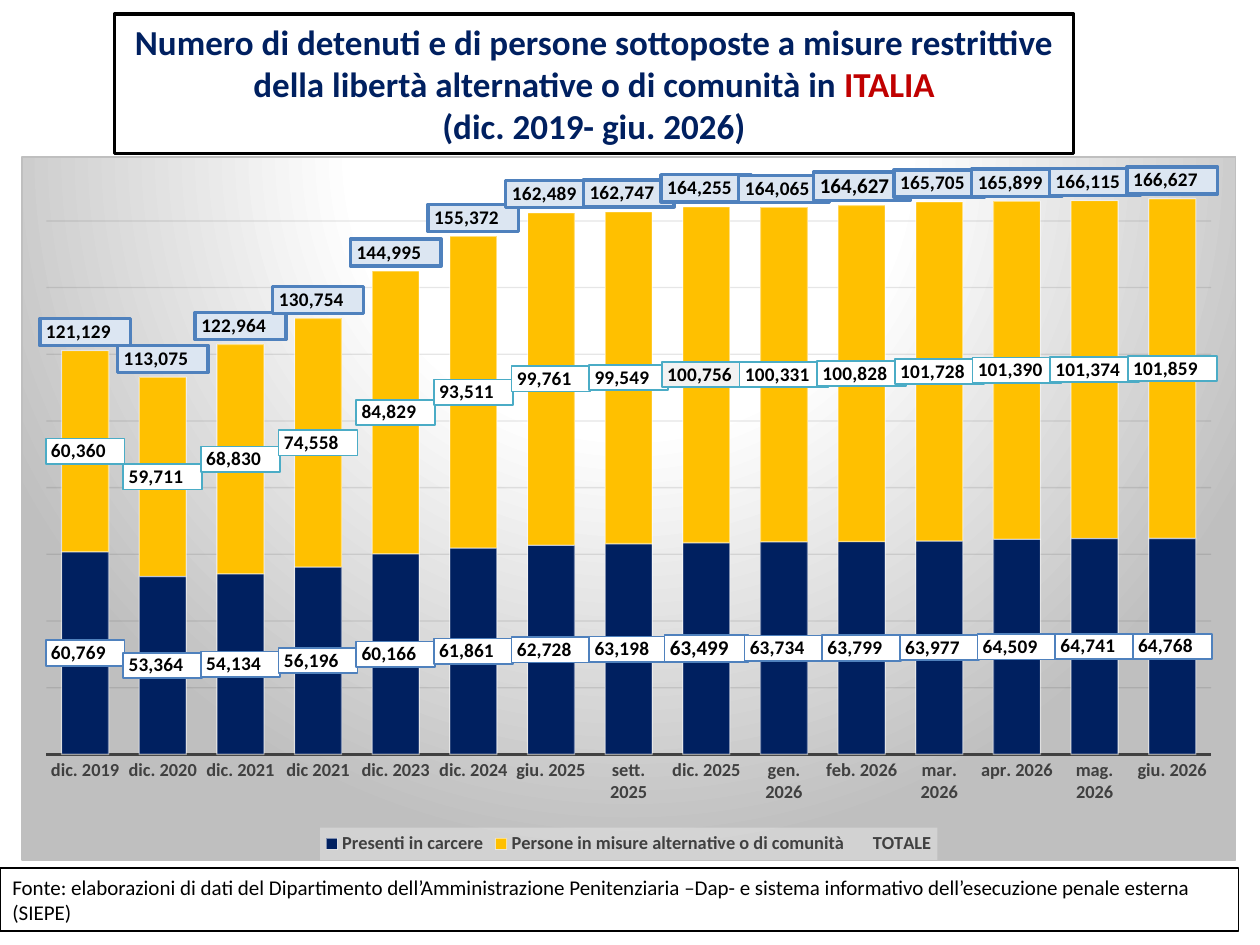
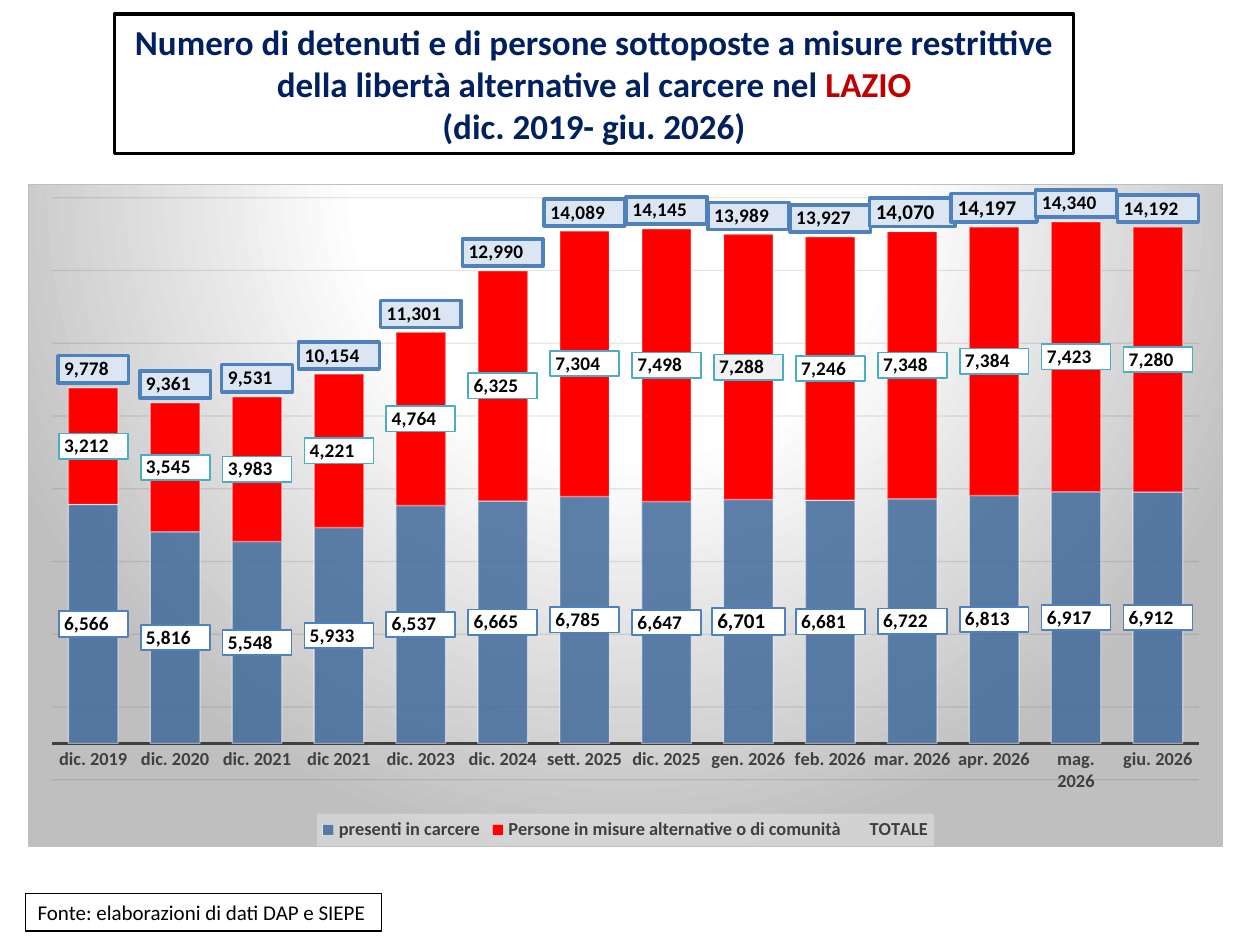
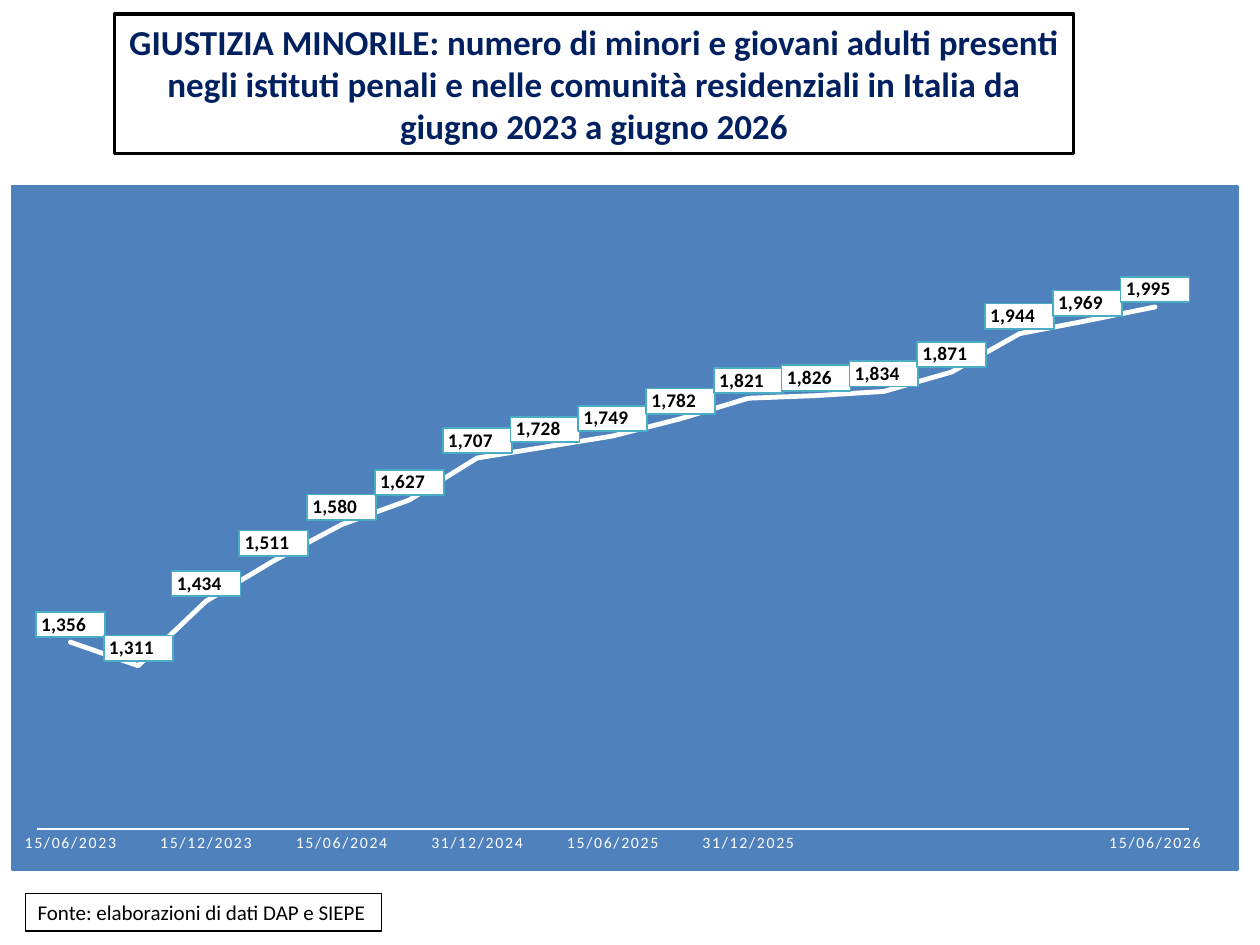
from dataclasses import dataclass
from typing import Optional

import lxml.etree
import pptx
import pptx.chart.data
import pptx.dml.color
import pptx.enum.chart
import pptx.enum.shapes
import pptx.enum.text
import pptx.oxml
import pptx.oxml.ns
import pptx.util
from pptx.dml.color import RGBColor
from pptx.enum.chart import XL_CHART_TYPE, XL_LABEL_POSITION
from pptx.util import Inches

# Shared look
FONT = "Calibri"
BLACK = RGBColor(0x00, 0x00, 0x00)
WHITE = RGBColor(0xFF, 0xFF, 0xFF)
NAVY = RGBColor(0x00, 0x20, 0x60)
DARK_RED = RGBColor(0xC0, 0x00, 0x00)
RED = RGBColor(0xFF, 0x00, 0x00)
AMBER = RGBColor(0xFF, 0xC0, 0x00)
STEEL = RGBColor(0x42, 0x6B, 0x9D)
BLUE = RGBColor(0x4F, 0x81, 0xBD)
PALE_BLUE = RGBColor(0xDC, 0xE6, 0xF2)
TEAL = RGBColor(0x4B, 0xAC, 0xC6)
DARK_GREY = RGBColor(0x40, 0x40, 0x40)
MID_GREY = RGBColor(0xBF, 0xBF, 0xBF)
PALE_GREY = RGBColor(0xF2, 0xF2, 0xF2)
GRID = RGBColor(0x0D, 0x0D, 0x0D)
NUMBER_FORMAT = '_-* #,##0\\ _€_-;\\-* #,##0\\ _€_-;_-* "-"?'
PERIOD = "(dic. 2019- giu. 2026)"
SHORT_SOURCE = "Fonte: elaborazioni di dati DAP e SIEPE"
COMMUNITY = "Persone in misure alternative o di comunità"


@dataclass(frozen=True)
class Box:
    left: float
    top: float
    width: float
    height: float

    def lengths(self) -> tuple:
        return tuple(map(Inches, (self.left, self.top, self.width, self.height)))


@dataclass(frozen=True)
class TextPiece:
    text: str
    color: RGBColor


@dataclass(frozen=True)
class LabelStyle:
    fill: RGBColor
    border: RGBColor
    border_width: float
    position: XL_LABEL_POSITION


@dataclass(frozen=True)
class Series:
    name: str
    values: tuple
    color: Optional[RGBColor]
    label: LabelStyle
    large_points: tuple = ()
    shaded_points: tuple = ()


@dataclass(frozen=True)
class ChartPanel:
    box: Box
    plot: Box  # fractions of the chart area
    categories: tuple
    series: tuple
    minimum: Optional[float] = None
    maximum: Optional[float] = None


TITLE_BOX = Box(0.91, 0.11, 7.61, 1.11)
SHORT_SOURCE_BOX = Box(0.2, 7.09, 2.83, 0.3)
PRISON_LABEL = LabelStyle(WHITE, BLUE, 1, XL_LABEL_POSITION.CENTER)
COMMUNITY_LABEL = LabelStyle(WHITE, TEAL, 1, XL_LABEL_POSITION.CENTER)
TOTAL_LABEL = LabelStyle(PALE_BLUE, BLUE, 2, XL_LABEL_POSITION.INSIDE_BASE)
MINORS_LABEL = LabelStyle(WHITE, TEAL, 1, XL_LABEL_POSITION.ABOVE)

YEARS = ("dic. 2019", "dic. 2020", "dic. 2021", "dic 2021", "dic. 2023", "dic. 2024")
MONTHS = ("sett. 2025", "dic. 2025", "gen. 2026", "feb. 2026", "mar. 2026",
          "apr. 2026", "mag. 2026", "giu. 2026")

ITALY = ChartPanel(
    Box(0.17, 1.24, 9.64, 5.59), Box(0.02, 0.02, 0.96, 0.83),
    YEARS + ("giu. 2025",) + MONTHS,
    (
        Series("Presenti in carcere",
               (60769, 53364, 54134, 56196, 60166, 61861, 62728, 63198, 63499,
                63734, 63799, 63977, 64509, 64741, 64768),
               NAVY, PRISON_LABEL, large_points=(8,)),
        Series(COMMUNITY,
               (60360, 59711, 68830, 74558, 84829, 93511, 99761, 99549, 100756,
                100331, 100828, 101728, 101390, 101374, 101859),
               AMBER, COMMUNITY_LABEL, shaded_points=(8,)),
        Series("TOTALE",
               (121129, 113075, 122964, 130754, 144995, 155372, 162489, 162747,
                164255, 164065, 164627, 165705, 165899, 166115, 166627),
               None, TOTAL_LABEL, large_points=(10,)),
    ),
    minimum=0, maximum=175000)

LAZIO = ChartPanel(
    Box(0.22, 1.46, 9.49, 5.26), Box(0.02, 0.02, 0.96, 0.88),
    YEARS + MONTHS,
    (
        Series("presenti in carcere",
               (6566, 5816, 5548, 5933, 6537, 6665, 6785, 6647, 6701, 6681,
                6722, 6813, 6917, 6912),
               STEEL, PRISON_LABEL, large_points=(8,)),
        Series(COMMUNITY,
               (3212, 3545, 3983, 4221, 4764, 6325, 7304, 7498, 7288, 7246,
                7348, 7384, 7423, 7280),
               RED, COMMUNITY_LABEL, shaded_points=(8,)),
        Series("TOTALE",
               (9778, 9361, 9531, 10154, 11301, 12990, 14089, 14145, 13989,
                13927, 14070, 14197, 14340, 14192),
               None, TOTAL_LABEL, large_points=(10, 11)),
    ),
    maximum=15000)

MINORS = ChartPanel(
    Box(0.09, 1.47, 9.74, 5.44), Box(0.02, 0.02, 0.94, 0.92),
    ("15/06/2023", "", "15/12/2023", "", "15/06/2024", "", "31/12/2024", "",
     "15/06/2025", "", "31/12/2025", "", "", "", "", "", "15/06/2026"),
    (
        Series("Series 1",
               (1356, 1311, 1434, 1511, 1580, 1627, 1707, 1728, 1749, 1782,
                1821, 1826, 1834, 1871, 1944, 1969, 1995),
               WHITE, MINORS_LABEL),
    ),
    minimum=1000)


# XML helpers
def chart_xml(content: str):
    """Parse one chart element, adding the namespaces to its first tag."""
    tag, rest = content.split(">", 1)
    return pptx.oxml.parse_xml(f"{tag} {pptx.oxml.ns.nsdecls('c', 'a')}>{rest}")


def solid_fill(color: RGBColor, opacity: int = 100) -> str:
    return (f'<a:solidFill><a:srgbClr val="{color}"><a:alpha val="{opacity * 1000}"/>'
            "</a:srgbClr></a:solidFill>")


def area_properties(fill: str, border: Optional[RGBColor] = None, width: float = 0.75):
    line = f'<a:ln w="{pptx.util.Pt(width)}">{solid_fill(border)}</a:ln>' if border else ""
    return chart_xml(f"<c:spPr>{fill}{line}</c:spPr>")


def radial_fill() -> str:
    stops = "".join(f'<a:gs pos="{position * 1000}"><a:srgbClr val="{color}"/></a:gs>'
                    for position, color in ((0, WHITE), (39, WHITE), (100, MID_GREY)))
    return (f'<a:gradFill><a:gsLst>{stops}</a:gsLst><a:path path="circle">'
            '<a:fillToRect l="50000" t="-80000" r="50000" b="180000"/></a:path></a:gradFill>')


def set_opacity(chart, query: str, percent: int) -> None:
    for color in chart.element.xpath(query):
        alpha = lxml.etree.SubElement(color, pptx.oxml.ns.qn("a:alpha"))
        alpha.set("val", str(percent * 1000))


def place_plot(chart, plot: Box) -> None:
    area = chart.element.xpath("c:chart/c:plotArea")[0]
    for layout in area.xpath("c:layout"):
        area.remove(layout)
    parts = "".join(f'<c:{name} val="{value}"/>' for name, value in (
        ("layoutTarget", "inner"), ("xMode", "edge"), ("yMode", "edge"),
        ("x", plot.left), ("y", plot.top), ("w", plot.width), ("h", plot.height)))
    area.insert(0, chart_xml(f"<c:layout><c:manualLayout>{parts}</c:manualLayout></c:layout>"))


# Text
def style_font(font, size: float, color: RGBColor, bold: bool = False) -> None:
    font.name = FONT
    font.size = pptx.util.Pt(size)
    font.bold = bold
    font.color.rgb = color


def add_text_frame(slide, box: Box, paragraphs: tuple, size: float, line_width: float,
                   bold: bool = False, centred: bool = False, wrap: bool = True) -> None:
    shape = slide.shapes.add_shape(pptx.enum.shapes.MSO_SHAPE.RECTANGLE, *box.lengths())
    shape.shadow.inherit = False
    shape.fill.solid()
    shape.fill.fore_color.rgb = WHITE
    shape.line.color.rgb = BLACK
    shape.line.width = pptx.util.Pt(line_width)
    frame = shape.text_frame
    frame.word_wrap = wrap
    frame.auto_size = pptx.enum.text.MSO_AUTO_SIZE.SHAPE_TO_FIT_TEXT
    frame.vertical_anchor = pptx.enum.text.MSO_ANCHOR.TOP
    alignment = pptx.enum.text.PP_ALIGN
    for index, pieces in enumerate(paragraphs):
        paragraph = frame.add_paragraph() if index else frame.paragraphs[0]
        paragraph.alignment = alignment.CENTER if centred else alignment.LEFT
        for piece in pieces:
            run = paragraph.add_run()
            run.text = piece.text
            style_font(run.font, size, piece.color, bold)


def add_title(slide, *paragraphs: tuple) -> None:
    add_text_frame(slide, TITLE_BOX, paragraphs, 20, 2, bold=True, centred=True)


def add_source(slide, text: str = SHORT_SOURCE, box: Box = SHORT_SOURCE_BOX,
               wrap: bool = False) -> None:
    add_text_frame(slide, box, ((TextPiece(text, BLACK),),), 12, 0.75, wrap=wrap)


# Charts
def label_series(chart, index: int, item: Series) -> None:
    series = chart.plots[0].series[index]
    labels = series.data_labels
    labels.show_value = True
    labels.number_format = NUMBER_FORMAT
    labels.number_format_is_linked = False
    labels.position = item.label.position
    style_font(labels.font, 11, BLACK, True)
    for point in item.large_points + item.shaded_points:
        label = series.points[point].data_label
        style_font(label.font, 12 if point in item.large_points else 11, BLACK, True)
        label.position = item.label.position

    group = chart.element.xpath("//c:ser")[index].xpath("c:dLbls")[0]
    for element in [group, *group.xpath("c:dLbl")]:
        text = element.xpath("c:txPr")[0]
        fill = item.label.fill
        if element is not group:
            number_format = chart_xml('<c:numFmt sourceLinked="0"></c:numFmt>')
            number_format.set("formatCode", NUMBER_FORMAT)
            text.addprevious(number_format)
            if int(element.xpath("c:idx/@val")[0]) in item.shaded_points:
                fill = PALE_GREY
        text.addprevious(area_properties(solid_fill(fill), item.label.border,
                                         item.label.border_width))


def add_panel(slide, panel: ChartPanel, chart_type: XL_CHART_TYPE, background: str,
              border: RGBColor):
    data = pptx.chart.data.CategoryChartData(number_format=NUMBER_FORMAT)
    data.categories = panel.categories
    for item in panel.series:
        data.add_series(item.name, item.values)
    chart = slide.shapes.add_chart(chart_type, *panel.box.lengths(), data).chart
    chart.has_title = False
    chart.has_legend = False
    style_font(chart.font, 10, BLACK)
    chart.element.xpath("c:chart")[0].addnext(area_properties(background, border))
    place_plot(chart, panel.plot)
    chart.plots[0].vary_by_categories = False

    value_axis = chart.value_axis
    value_axis.visible = False
    value_axis.has_major_gridlines = False
    value_axis.tick_labels.number_format = NUMBER_FORMAT
    value_axis.tick_labels.number_format_is_linked = False
    if panel.minimum is not None:
        value_axis.minimum_scale = panel.minimum
    if panel.maximum is not None:
        value_axis.maximum_scale = panel.maximum

    for index, item in enumerate(panel.series):
        label_series(chart, index, item)
    return chart


def style_category_axis(chart, size: float, color: RGBColor, line_width: float,
                        bold: bool = False) -> None:
    axis = chart.category_axis
    axis.major_tick_mark = pptx.enum.chart.XL_TICK_MARK.NONE
    axis.format.line.color.rgb = color
    axis.format.line.width = pptx.util.Pt(line_width)
    style_font(axis.tick_labels.font, size, color, bold)
    body = chart.element.xpath("//c:catAx/c:txPr/a:bodyPr")[0]
    body.set("rot", "-60000000")
    body.set("vert", "horz")


def add_stacked_columns(slide, panel: ChartPanel):
    chart = add_panel(slide, panel, XL_CHART_TYPE.COLUMN_STACKED, radial_fill(), MID_GREY)
    style_category_axis(chart, 10.5, DARK_GREY, 1.5, bold=True)
    plot = chart.plots[0]
    plot.gap_width = 65
    plot.overlap = 100
    for series, item in zip(plot.series, panel.series):
        if item.color is None:
            series.format.fill.background()
            series.format.line.fill.background()
            continue
        series.format.fill.solid()
        series.format.fill.fore_color.rgb = item.color
        series.format.line.color.rgb = WHITE
        series.format.line.width = pptx.util.Pt(0.75)
    set_opacity(chart, "//c:ser/c:spPr/a:ln//a:srgbClr", 50)

    chart.value_axis.has_major_gridlines = True
    grid_line = chart.value_axis.major_gridlines.format.line
    grid_line.color.rgb = GRID
    grid_line.width = pptx.util.Pt(0.75)
    set_opacity(chart, "//c:majorGridlines//a:srgbClr", 10)

    chart.has_legend = True
    chart.legend.position = pptx.enum.chart.XL_LEGEND_POSITION.BOTTOM
    chart.legend.include_in_layout = False
    style_font(chart.legend.font, 10.5, DARK_GREY, True)
    legend_text = chart.element.xpath("//c:legend/c:txPr")[0]
    legend_text.addprevious(area_properties(solid_fill(PALE_GREY, 39)))
    return chart


def add_minors_line(slide) -> None:
    chart = add_panel(slide, MINORS, XL_CHART_TYPE.LINE_STACKED, solid_fill(BLUE), BLUE)
    style_category_axis(chart, 9, WHITE, 1)
    chart.element.xpath("//c:catAx/c:txPr//a:defRPr")[0].set("spc", "100")
    series = chart.plots[0].series[0]
    series.smooth = False
    series.marker.style = pptx.enum.chart.XL_MARKER_STYLE.NONE
    series.format.line.color.rgb = MINORS.series[0].color
    series.format.line.width = pptx.util.Pt(2.75)
    chart.element.xpath("//c:ser/c:spPr/a:ln")[0].set("cap", "rnd")


def main() -> None:
    presentation = pptx.Presentation()
    presentation.slide_width = Inches(10)
    presentation.slide_height = Inches(7.5)
    blank = presentation.slide_layouts[6]
    restricted = "Numero di detenuti e di persone sottoposte a misure restrittive della libertà "

    # Italy
    slide = presentation.slides.add_slide(blank)
    add_title(slide,
              (TextPiece(restricted + "alternative o di comunità in ", NAVY),
               TextPiece("ITALIA", DARK_RED)),
              (TextPiece(PERIOD, NAVY),))
    add_source(slide,
               "Fonte: elaborazioni di dati del Dipartimento dell’Amministrazione "
               "Penitenziaria –Dap- e sistema informativo dell’esecuzione penale "
               "esterna (SIEPE)",
               Box(0, 6.89, 9.83, 0.5), wrap=True)
    add_stacked_columns(slide, ITALY)

    # Lazio
    slide = presentation.slides.add_slide(blank)
    add_title(slide,
              (TextPiece(restricted + "alternative al carcere nel ", NAVY),
               TextPiece("LAZIO", DARK_RED)),
              (TextPiece(PERIOD, NAVY),))
    add_source(slide)
    chart = add_stacked_columns(slide, LAZIO)
    set_opacity(chart, "(//c:ser)[1]/c:spPr/a:solidFill/a:srgbClr", 85)

    # Juvenile justice
    slide = presentation.slides.add_slide(blank)
    add_title(slide, (TextPiece(
        "GIUSTIZIA MINORILE: numero di minori e giovani adulti presenti negli istituti "
        "penali e nelle comunità residenziali in Italia da giugno 2023 a giugno 2026",
        NAVY),))
    add_source(slide)
    add_minors_line(slide)

    presentation.save("out.pptx")


if __name__ == "__main__":
    main()
